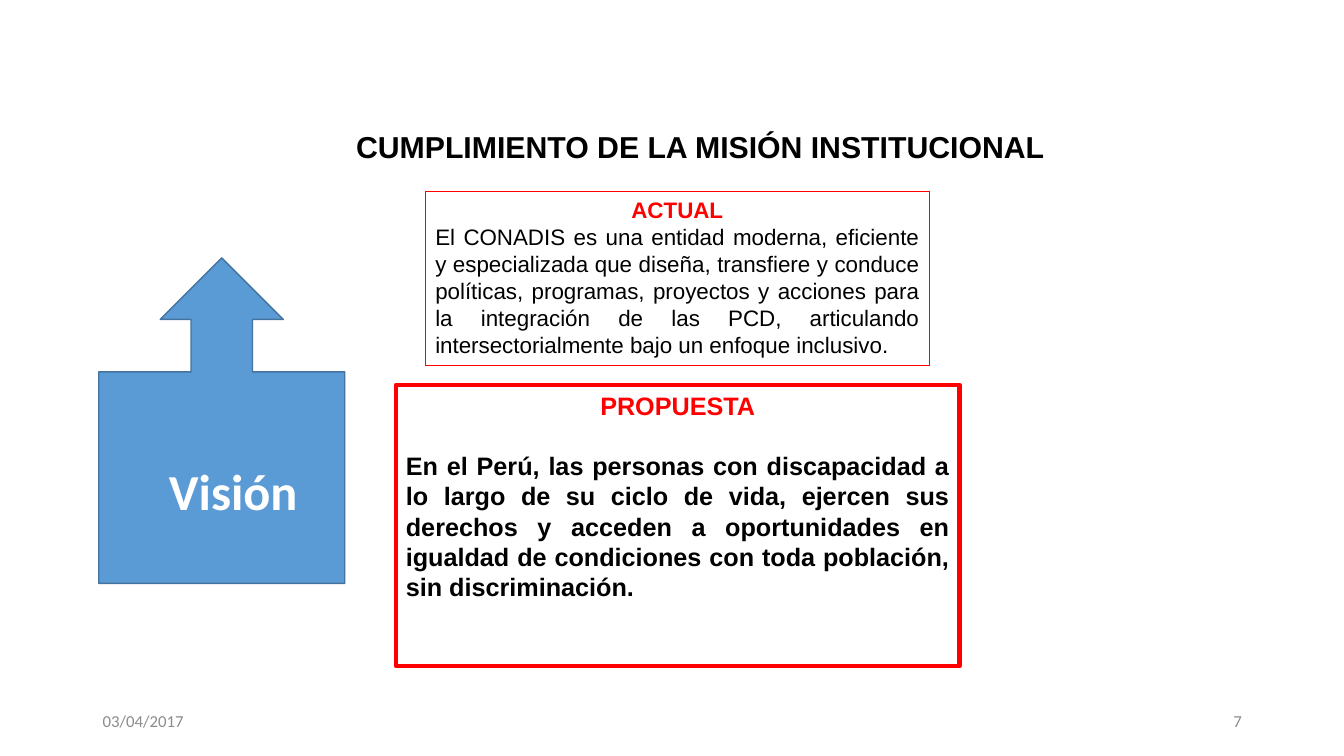
from pptx import Presentation
from pptx.dml.color import RGBColor
from pptx.enum.shapes import MSO_SHAPE
from pptx.enum.text import MSO_ANCHOR, PP_ALIGN
from pptx.util import Cm, Pt

RED, BLACK, GRAY = "FF0000", "000000", "8C8C8C"


def paint(target, color):
    if hasattr(target, "solid"):
        target.solid()
        target = target.fore_color
    target.rgb = RGBColor.from_string(color)


def write(frame, text, font="Arial", size=18, color=BLACK, bold=False,
          align=PP_ALIGN.CENTER, anchor=MSO_ANCHOR.TOP, before=0, line=None):
    frame.word_wrap = True
    frame.vertical_anchor = anchor
    par = frame.paragraphs[0]
    if par.text:
        par = frame.add_paragraph()
    par.alignment = align
    par.space_before = Pt(before)
    par.line_spacing = line
    run = par.add_run()
    run.text = text
    run.font.name, run.font.size, run.font.bold = font, Pt(size), bold
    paint(run.font.color, color)


deck = Presentation()
deck.slide_width, deck.slide_height = Cm(33.87), Cm(19.05)
slide = deck.slides.add_slide(deck.slide_layouts[5])
shapes = slide.shapes

# Title
title = shapes.title
title.left, title.top, title.width, title.height = Cm(4.39), Cm(2.44), Cm(26.52), Cm(2.62)
write(title.text_frame, "CUMPLIMIENTO DE LA MISIÓN INSTITUCIONAL", size=21.6,
      bold=True, anchor=MSO_ANCHOR.MIDDLE, line=0.9)

# Date and slide number
for left, text, align in ((2.34, "03/04/2017", PP_ALIGN.LEFT), (23.93, "7", PP_ALIGN.RIGHT)):
    foot = shapes.add_textbox(Cm(left), Cm(17.65), Cm(7.62), Cm(1.02))
    write(foot.text_frame, text, font="Calibri", size=12, color=GRAY,
          align=align, anchor=MSO_ANCHOR.MIDDLE)

# Current and proposed vision
panels = (
    ((10.72, 4.83, 12.7, 4.37), 0.75, 16, False, 0, "ACTUAL",
     "El CONADIS es una entidad moderna, eficiente y especializada que diseña, "
     "transfiere y conduce políticas, programas, proyectos y acciones para la "
     "integración de las PCD, articulando intersectorialmente bajo un enfoque inclusivo."),
    ((9.98, 9.7, 14.2, 7.09), 3, 18, True, 21.6, "PROPUESTA",
     "En el Perú, las personas con discapacidad a lo largo de su ciclo de vida, "
     "ejercen sus derechos y acceden a oportunidades en igualdad de condiciones "
     "con toda población, sin discriminación."),
)
for place, width, size, bold, gap, head, text in panels:
    panel = shapes.add_shape(MSO_SHAPE.RECTANGLE, *map(Cm, place))
    panel.shadow.inherit = False
    panel.fill.background()
    paint(panel.line.fill, RED)
    panel.line.width = Pt(width)
    write(panel.text_frame, head, size=size, color=RED, bold=True)
    write(panel.text_frame, text, size=size, bold=bold, align=PP_ALIGN.JUSTIFY, before=gap)

# Arrow callout and its label
arrow = shapes.add_shape(MSO_SHAPE.UP_ARROW_CALLOUT, Cm(2.49), Cm(6.5), Cm(6.2), Cm(8.2))
arrow.shadow.inherit = False
paint(arrow.fill, "5B9BD5")
paint(arrow.line.fill, "43739E")
arrow.line.width = Pt(1)
label = shapes.add_textbox(Cm(3.63), Cm(11.46), Cm(4.5), Cm(1.8))
write(label.text_frame, "Visión", font="Calibri", size=36, color="FFFFFF", bold=True)

deck.save("out.pptx")
